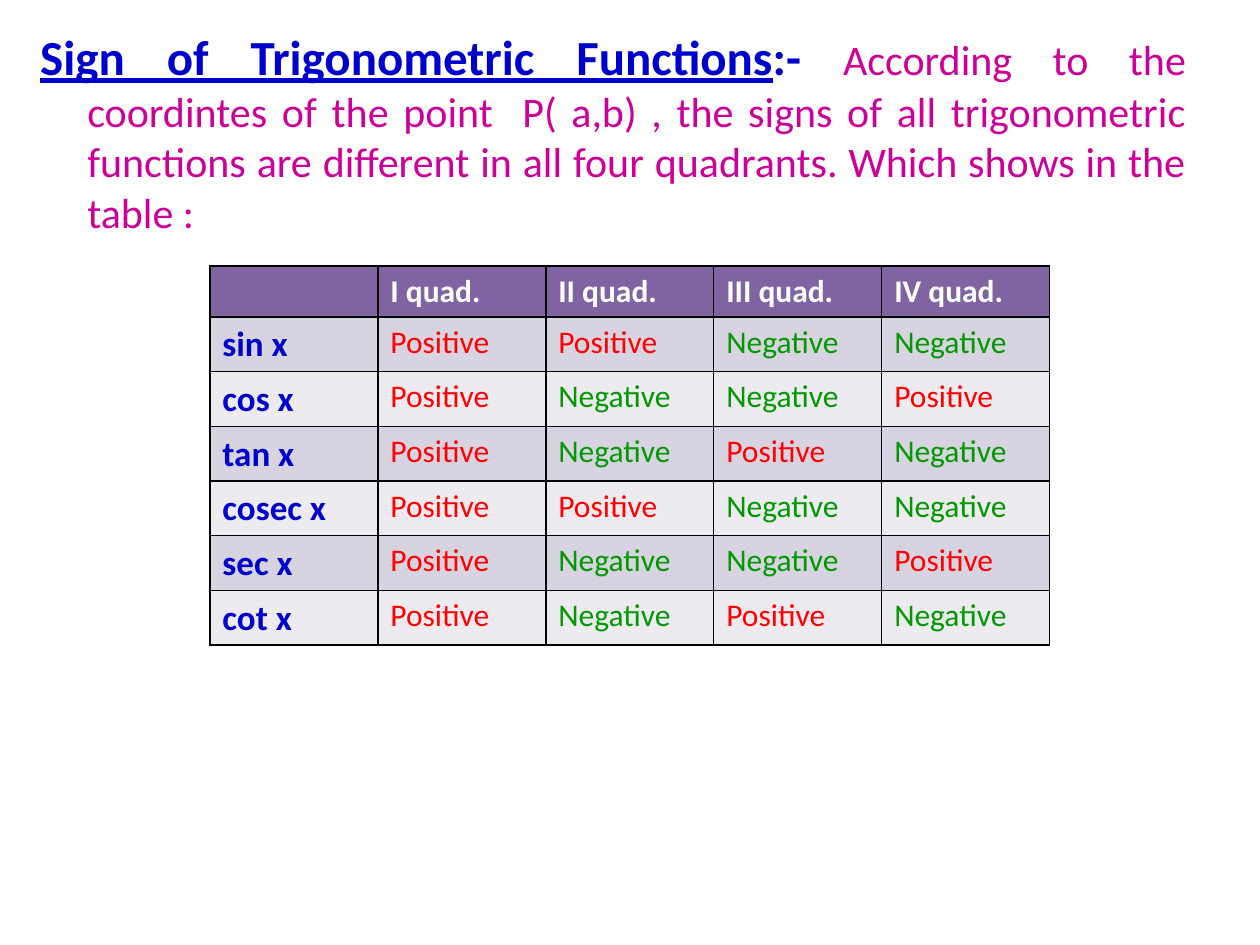
from dataclasses import dataclass

from lxml import etree
from pptx import Presentation
from pptx.dml.color import RGBColor
from pptx.enum import text
from pptx.oxml.ns import qn
from pptx.util import Cm, Pt


@dataclass(frozen=True)
class Theme:
    font: str = "Calibri"
    blue: str = "0000CC"
    magenta: str = "CC0099"
    white: str = "FFFFFF"
    red: str = "FF0000"
    green: str = "009900"
    header_fill: str = "8064A2"
    band_fills: tuple[str, str] = ("D8D3E0", "EDEAF0")
    border: str = "000000"
    title_size: int = 28
    body_size: int = 24
    label_size: int = 20
    cell_size: int = 18


@dataclass(frozen=True)
class TextStyle:
    size: int
    color: str
    bold: bool = False
    underline: bool = False


@dataclass(frozen=True)
class FunctionRow:
    name: str
    signs: str  # one + or - for each quadrant


THEME = Theme()
HEADINGS = ("", "I quad.", "II quad.", "III quad.", "IV quad.")
FUNCTIONS = (
    FunctionRow("sin x", "++--"),
    FunctionRow("cos x", "+--+"),
    FunctionRow("tan x", "+-+-"),
    FunctionRow("cosec x", "++--"),
    FunctionRow("sec x", "+--+"),
    FunctionRow("cot x", "+-+-"),
)
HEADING_STYLE = TextStyle(THEME.cell_size, THEME.white, bold=True)
LABEL_STYLE = TextStyle(THEME.label_size, THEME.blue, bold=True)
SIGNS = {
    "+": ("Positive", TextStyle(THEME.cell_size, THEME.red)),
    "-": ("Negative", TextStyle(THEME.cell_size, THEME.green)),
}


def add_run(paragraph, content: str, style: TextStyle) -> None:
    run = paragraph.add_run()
    run.text = content
    values = {
        "name": THEME.font,
        "size": Pt(style.size),
        "bold": style.bold,
        "underline": style.underline,
    }
    for name, value in values.items():
        setattr(run.font, name, value)
    run.font.color.rgb = RGBColor.from_string(style.color)


def add_borders(cell) -> None:
    properties = cell._tc.get_or_add_tcPr()
    for side in ("lnL", "lnR", "lnT", "lnB"):
        line = etree.SubElement(properties, qn(f"a:{side}"), w=str(Pt(1)))
        fill = etree.SubElement(line, qn("a:solidFill"))
        etree.SubElement(fill, qn("a:srgbClr"), val=THEME.border)


def fill_cell(cell, content: str, style: TextStyle, fill: str) -> None:
    add_borders(cell)
    cell.fill.solid()
    cell.fill.fore_color.rgb = RGBColor.from_string(fill)
    if content:
        add_run(cell.text_frame.paragraphs[0], content, style)


def add_introduction(slide) -> None:
    box = slide.shapes.add_textbox(Cm(0.56), Cm(0.41), Cm(23.6), Cm(17))
    box.text_frame.word_wrap = True
    paragraph = box.text_frame.paragraphs[0]
    paragraph.alignment = text.PP_ALIGN.JUSTIFY
    # Hanging indent
    properties = paragraph._p.get_or_add_pPr()
    for name, value in {"marL": Cm(0.95), "indent": -Cm(0.95)}.items():
        properties.set(name, str(int(value)))
    add_run(paragraph, "Sign of Trigonometric Functions",
            TextStyle(THEME.title_size, THEME.blue, bold=True, underline=True))
    add_run(paragraph, ":- ", TextStyle(THEME.title_size, THEME.blue, bold=True))
    add_run(paragraph,
            "According to the coordintes of the point  P( a,b) , the signs of all "
            "trigonometric functions are different in all four quadrants. "
            "Which shows in the table :",
            TextStyle(THEME.body_size, THEME.magenta))


def add_sign_table(slide) -> None:
    row_count = len(FUNCTIONS) + 1
    table = slide.shapes.add_table(
        row_count, len(HEADINGS), Cm(4.23), Cm(5.36), Cm(16.93), Cm(1.03) * row_count
    ).table

    # Quadrant headings
    for column, heading in enumerate(HEADINGS):
        fill_cell(table.cell(0, column), heading, HEADING_STYLE, THEME.header_fill)

    # One banded row for each function
    for index, function in enumerate(FUNCTIONS):
        entries = [(function.name, LABEL_STYLE)] + [SIGNS[s] for s in function.signs]
        for column, (content, style) in enumerate(entries):
            fill_cell(table.cell(index + 1, column), content, style,
                      THEME.band_fills[index % 2])


def main() -> None:
    presentation = Presentation()
    presentation.slide_width, presentation.slide_height = Cm(25.4), Cm(19.05)
    slide = presentation.slides.add_slide(presentation.slide_layouts[6])
    add_introduction(slide)
    add_sign_table(slide)
    presentation.save("out.pptx")


if __name__ == "__main__":
    main()
